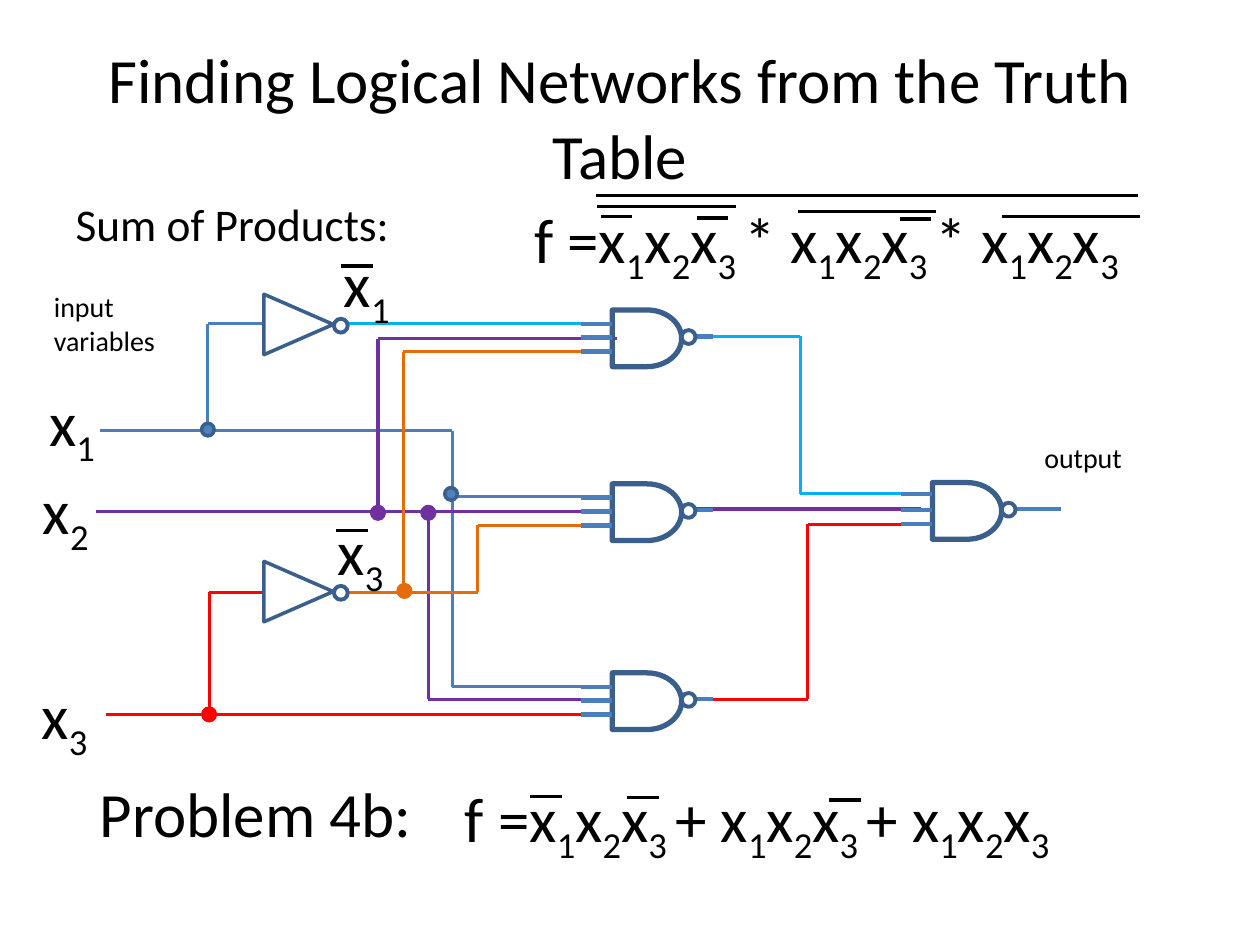
from dataclasses import dataclass
from itertools import pairwise

from lxml.etree import SubElement
from pptx import Presentation
from pptx.dml.color import RGBColor
from pptx.enum.shapes import MSO_CONNECTOR as Connector, MSO_SHAPE as Shape
from pptx.enum.text import MSO_ANCHOR as Anchor, PP_ALIGN as Align
from pptx.oxml.ns import qn
from pptx.util import Inches, Pt


@dataclass(frozen=True)
class Theme:
    """Colours, font and type sizes of the slide."""
    font: str = "Calibri"
    ink: str = "000000"
    white: str = "FFFFFF"
    outline: str = "3A5F8C"
    blue: str = "4B7EBC"
    node: str = "4F81BD"
    cyan: str = "00B0F0"
    purple: str = "7030A0"
    red: str = "FF0000"
    orange: str = "E46C0A"
    large: float = 36
    medium: float = 25.9
    small: float = 16


@dataclass(frozen=True)
class Box:
    """A region in inches."""
    left: float
    top: float
    width: float
    height: float

    def inner(self, dx, dy, width=0, height=0):
        """Return a box placed relative to this one."""
        return Box(self.left + dx, self.top + dy, width, height)

    def lengths(self):
        """Return the four sides as lengths."""
        return [Inches(side) for side in (self.left, self.top, self.width, self.height)]


THEME = Theme()
BAR = 0.25
TERM_BAR = 1.1


def draw_path(page, box, points, colour, weight):
    """Draw straight segments through points relative to the box."""
    for (x1, y1), (x2, y2) in pairwise(points):
        line = page.shapes.add_connector(
            Connector.STRAIGHT,
            Inches(box.left + x1), Inches(box.top + y1),
            Inches(box.left + x2), Inches(box.top + y2))
        line.line.color.rgb = RGBColor.from_string(colour)
        line.line.width = Pt(weight)
        SubElement(line._element.spPr, qn("a:effectLst"))


def draw_shape(page, kind, box, outline, weight, fill=None):
    """Draw an outlined shape, filled only when a colour is given."""
    shape = page.shapes.add_shape(kind, *box.lengths())
    shape.shadow.inherit = False
    shape.line.color.rgb = RGBColor.from_string(outline)
    shape.line.width = Pt(weight)
    if fill:
        shape.fill.solid()
        shape.fill.fore_color.rgb = RGBColor.from_string(fill)
    else:
        shape.fill.background()
    return shape


def style_text(para, size):
    """Set the slide font on a paragraph."""
    para.font.name = THEME.font
    para.font.size = Pt(size)
    para.font.color.rgb = RGBColor.from_string(THEME.ink)


def add_text(page, box, text, size, inset=True):
    """Add a text box whose bar-separated pieces alternate with subscripts."""
    frame = page.shapes.add_textbox(*box.lengths()).text_frame
    frame.word_wrap = True
    if not inset:
        frame.margin_left = frame.margin_top = frame.margin_right = frame.margin_bottom = 0
    para = frame.paragraphs[0]
    style_text(para, size)
    for index, piece in enumerate(text.split("|")):
        if piece:
            span = para.add_run()
            span.text = piece
            if index % 2:
                span._r.get_or_add_rPr().set("baseline", "-25000")


def add_variable(page, box, number, bar=None):
    """Add a subscripted input variable, negated when a bar offset is given."""
    add_text(page, box, f"x|{number}|", THEME.large, inset=False)
    if bar:
        add_bars(page, box, [(*bar, BAR)])


def add_bars(page, box, bars):
    """Draw negation bars given as offset and length."""
    for dx, dy, length in bars:
        draw_path(page, box, [(dx, dy), (dx + length, dy)], THEME.ink, 2)


def add_formula(page, box, operator, bars):
    """Write the three-term function with its negation bars."""
    terms = f"|3 |{operator} ".join(["x|1|x|2|x"] * 3)
    add_text(page, box, f"f ={terms}|3|", THEME.large)
    add_bars(page, box, bars)


def add_inverter(page, box):
    """Draw a NOT gate."""
    triangle = draw_shape(page, Shape.ISOSCELES_TRIANGLE, box.inner(0, 0, 0.48, 0.55),
                          THEME.outline, 2)
    triangle.rotation = 90
    draw_shape(page, Shape.OVAL, box.inner(0.52, 0.23, 0.11, 0.11),
               THEME.outline, 2.25, THEME.white)


def add_nand(page, box, pins=(0.11, 0.22, 0.33), stub=0.25):
    """Draw a three-input NAND gate with its pins and output stub."""
    draw_shape(page, Shape.FLOWCHART_DELAY, box.inner(0, 0, 0.55, 0.45), THEME.outline, 3)
    for pin in pins:
        draw_path(page, box, [(-0.25, pin), (0, pin)], THEME.blue, 2.5)
    draw_path(page, box, [(0.55, 0.21), (0.55 + stub, 0.21)], THEME.blue, 2.5)
    draw_shape(page, Shape.OVAL, box.inner(0.55, 0.16, 0.11, 0.11),
               THEME.outline, 2.25, THEME.white)


def add_circuit(page, box):
    """Draw the wires, junctions, gates and labels of the network."""
    wires = {
        THEME.blue: [
            [(0.79, 1.42), (3.59, 1.42), (3.59, 3.45), (4.83, 3.45)],
            [(1.65, 1.42), (1.65, 0.57), (2.09, 0.57)],
            [(3.59, 1.94), (4.82, 1.94)]],
        THEME.cyan: [
            [(2.75, 0.57), (4.73, 0.57)],
            [(5.46, 0.67), (6.35, 0.67), (6.35, 1.92), (7.29, 1.92)]],
        THEME.purple: [
            [(0.76, 2.06), (4.67, 2.06)],
            [(3, 2.06), (3, 0.69), (4.9, 0.69)],
            [(3.4, 2.06), (3.4, 3.55), (4.87, 3.55)],
            [(5.42, 2.04), (7.31, 2.04)]],
        THEME.orange: [
            [(2.76, 2.7), (3.79, 2.7), (3.79, 2.17), (4.77, 2.17)],
            [(3.2, 2.7), (3.2, 0.79), (4.82, 0.79)]],
        THEME.red: [
            [(0.84, 3.67), (4.85, 3.67)],
            [(1.66, 3.67), (1.66, 2.7), (2.09, 2.7)],
            [(5.46, 3.55), (6.41, 3.55), (6.41, 2.16), (7.29, 2.16)]],
    }
    for colour, routes in wires.items():
        for points in routes:
            draw_path(page, box, points, colour, 1.75)
    junctions = [
        (1.65, 1.41, THEME.node, THEME.outline), (3.58, 1.92, THEME.node, THEME.outline),
        (3, 2.07, THEME.purple, THEME.purple), (3.4, 2.07, THEME.purple, THEME.purple),
        (1.66, 3.67, THEME.red, THEME.red), (3.21, 2.69, THEME.orange, THEME.orange)]
    for x, y, fill, outline in junctions:
        draw_shape(page, Shape.OVAL, box.inner(x - 0.05, y - 0.05, 0.1, 0.1), outline, 2, fill)
    for top in (0.3, 2.42):
        add_inverter(page, box.inner(2.13, top))
    for top in (0.46, 1.84, 3.34):
        add_nand(page, box.inner(4.86, top))
    add_nand(page, box.inner(7.4, 1.83), pins=(0.09, 0.22, 0.33), stub=0.47)
    for number, left, top in ((1, 0.39, 1.04), (2, 0.34, 1.74), (3, 0.33, 3.37)):
        add_variable(page, box.inner(left, top, 0.54, 0.61), number)
    add_variable(page, box.inner(2.73, -0.06, 0.54, 0.61), 1, (-0.02, 0.17))
    add_variable(page, box.inner(2.68, 2.07, 0.54, 0.61), 3, (-0.01, 0.14))
    add_text(page, box.inner(0.33, 0.25, 1.2, 0.64), "input variables", THEME.small)
    add_text(page, box.inner(8.19, 1.45, 0.95, 0.37), "output", THEME.small)


def fill_placeholder(holder, box, text, size):
    """Move a template placeholder and write its text."""
    holder.left, holder.top, holder.width, holder.height = box.lengths()
    holder.text_frame.text = text
    para = holder.text_frame.paragraphs[0]
    style_text(para, size)
    return para


def main():
    """Build and save the slide."""
    deck = Presentation()
    deck.slide_width, deck.slide_height = Inches(10), Inches(7.5)
    page = deck.slides.add_slide(deck.slide_layouts[1])
    title, body = page.placeholders
    heading = fill_placeholder(title, Box(0.17, 0.3, 9.5, 1.25),
                               "Finding Logical Networks from the Truth Table", THEME.large)
    heading.alignment = Align.CENTER
    title.text_frame.vertical_anchor = Anchor.MIDDLE
    subtitle = fill_placeholder(body, Box(0.5, 1.51, 2.81, 0.59),
                                "Sum of Products:", THEME.medium)
    settings = subtitle._p.get_or_add_pPr()
    settings.set("marL", "0")
    settings.set("indent", "0")
    settings.insert_element_before(settings.makeelement(qn("a:buNone")), "a:defRPr")
    add_circuit(page, Box(0, 2, 10, 4))
    add_formula(page, Box(4.14, 1.54, 5.16, 0.71), "*", [
        (0.63, 0.18, BAR), (1.39, 0.19, BAR), (3, 0.2, BAR), (0.6, 0.1, TERM_BAR),
        (2.19, 0.14, TERM_BAR), (3.81, 0.18, TERM_BAR), (0.59, 0.01, 4.3)])
    add_text(page, Box(0.58, 6.1, 2.87, 0.71), " Problem 4b:", THEME.large)
    add_formula(page, Box(3.59, 6.14, 5.16, 0.71), "+", [
        (0.62, 0.18, BAR), (1.39, 0.19, BAR), (2.99, 0.21, BAR)])
    deck.save("out.pptx")


if __name__ == "__main__":
    main()
